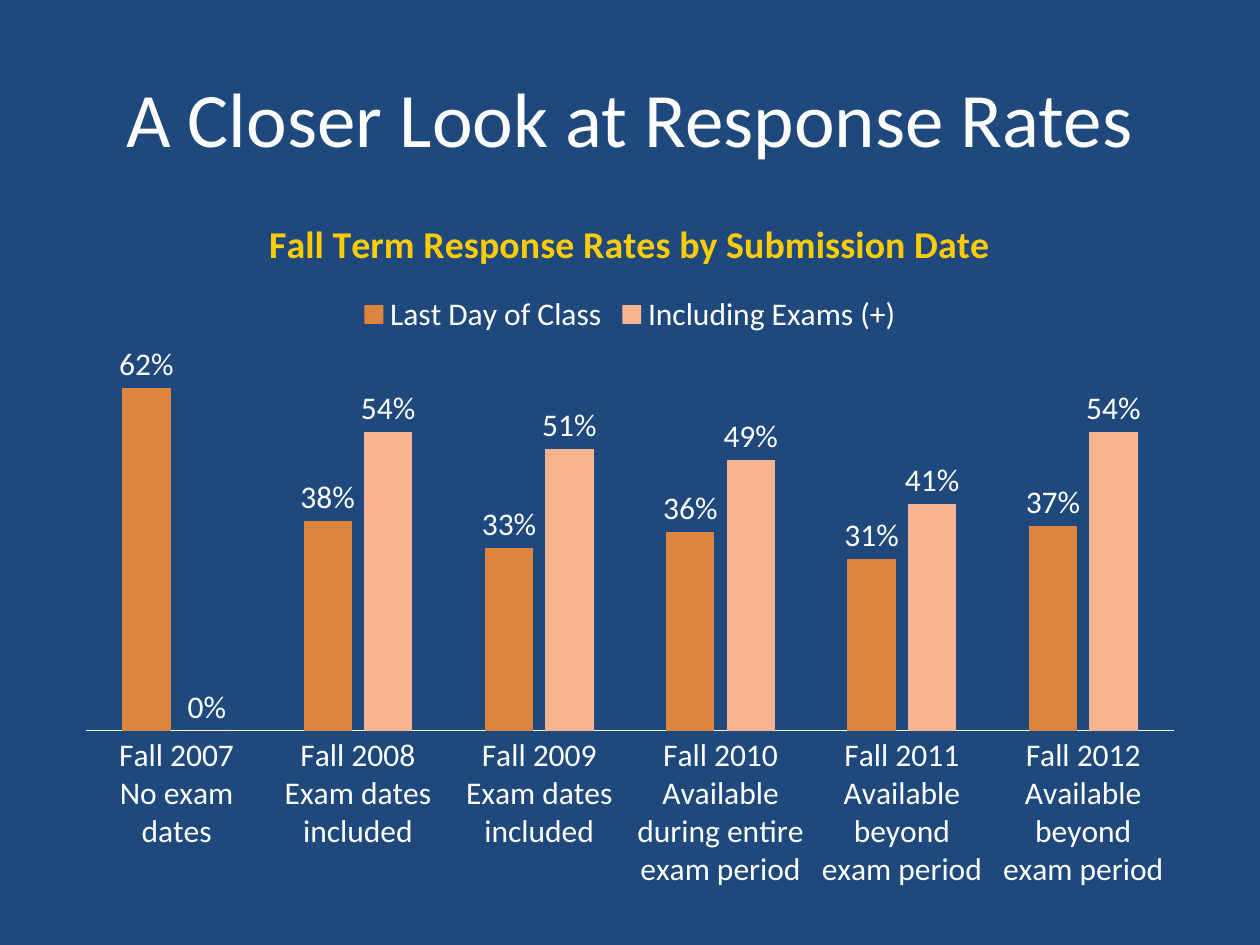
from lxml.etree import SubElement
from pptx import Presentation
from pptx.chart.data import CategoryChartData as Data
from pptx.dml.color import RGBColor as RGB
from pptx.enum.chart import XL_CHART_TYPE as Kind, XL_LABEL_POSITION as Spot
from pptx.enum.chart import XL_LEGEND_POSITION as Side, XL_TICK_MARK as Tick
from pptx.enum.text import MSO_ANCHOR as Anchor, PP_ALIGN as Align
from pptx.oxml.ns import qn
from pptx.util import Pt

PX = 914400 / 126
HUES = {"back": "1F497D", "text": "FFFFFF", "head": "FFCC00",
        "class": "DC853E", "exam": "FAB490"}
TERMS = ["Fall 2007\nNo exam\ndates",
         "Fall 2008 Exam dates included",
         "Fall 2009 Exam dates included",
         "Fall 2010 Available during entire exam period",
         "Fall 2011 Available beyond exam period",
         "Fall 2012 Available beyond exam period"]
RATES = [("Last Day of Class", "class", [0.62, 0.38, 0.33, 0.36, 0.31, 0.37]),
         ("Including Exams (+)", "exam", [0, 0.54, 0.51, 0.49, 0.41, 0.54])]


def emu(*box):
    return [round(n * PX) for n in box]


def hue(name):
    return RGB.from_string(HUES[name])


def assign(item, **values):
    for key, value in values.items():
        setattr(item, key, value)


def style(font, size, name="text", bold=False):
    assign(font, name="Calibri", size=Pt(size), bold=bold)
    font.color.rgb = hue(name)


def paint(fill, name):
    fill.solid()
    fill.fore_color.rgb = hue(name)


def add_title(slide, box, text):
    title = slide.shapes.title
    assign(title, **dict(zip(("left", "top", "width", "height"), emu(*box))))
    frame = title.text_frame
    assign(frame, text=text, vertical_anchor=Anchor.MIDDLE)
    line = frame.paragraphs[0]
    line.alignment = Align.CENTER
    style(line.runs[0].font, 44)


def set_plot(chart, box, inner):
    """Fix the plot's inner area, given in px relative to the chart box."""
    area = chart.plots[0]._element.getparent()
    layout = area.find(qn("c:layout"))
    if layout is None:
        layout = SubElement(area, qn("c:layout"))
        area.insert(0, layout)
    manual = SubElement(layout, qn("c:manualLayout"))
    wide, high = box[2:]
    x, y, w, h = inner
    marks = {"layoutTarget": "inner", "xMode": "edge", "yMode": "edge",
             "x": x / wide, "y": y / high, "w": w / wide, "h": h / high}
    for tag, value in marks.items():
        SubElement(manual, qn(f"c:{tag}")).set("val", str(value))


def add_rates(slide, box, head):
    data = Data(number_format="0%")
    data.categories = TERMS
    for name, _, values in RATES:
        data.add_series(name, values)
    chart = slide.shapes.add_chart(Kind.COLUMN_CLUSTERED, *emu(*box), data).chart
    style(chart.font, 18)

    chart.has_title = True
    chart.chart_title.include_in_layout = False
    frame = chart.chart_title.text_frame
    frame.text = head
    style(frame.paragraphs[0].runs[0].font, 21.6, "head", True)

    chart.has_legend = True
    assign(chart.legend, position=Side.TOP, include_in_layout=False)

    assign(chart.value_axis, visible=False, has_major_gridlines=False,
           minimum_scale=0, maximum_scale=0.7)
    axis = chart.category_axis
    assign(axis, major_tick_mark=Tick.NONE, minor_tick_mark=Tick.NONE)
    axis.format.line.color.rgb = hue("text")
    axis.format.line.width = Pt(0.75)

    plot = chart.plots[0]
    assign(plot, gap_width=150, overlap=-25, vary_by_categories=False,
           has_data_labels=True)
    assign(plot.data_labels, show_value=True, number_format="0%",
           number_format_is_linked=False, position=Spot.OUTSIDE_END)
    style(plot.data_labels.font, 18)
    for bars, (_, name, _) in zip(plot.series, RATES):
        paint(bars.format.fill, name)
    set_plot(chart, box, (23, 155, 1088, 387))


def main():
    deck = Presentation()
    deck.slide_width, deck.slide_height = emu(1260, 945)
    slide = deck.slides.add_slide(deck.slide_layouts[5])
    paint(slide.background.fill, "back")
    add_title(slide, (63, 38, 1134, 157), "A Closer Look at Response Rates")
    add_rates(slide, (63, 189, 1134, 714),
              "Fall Term Response Rates by Submission Date")
    deck.save("out.pptx")


if __name__ == "__main__":
    main()
